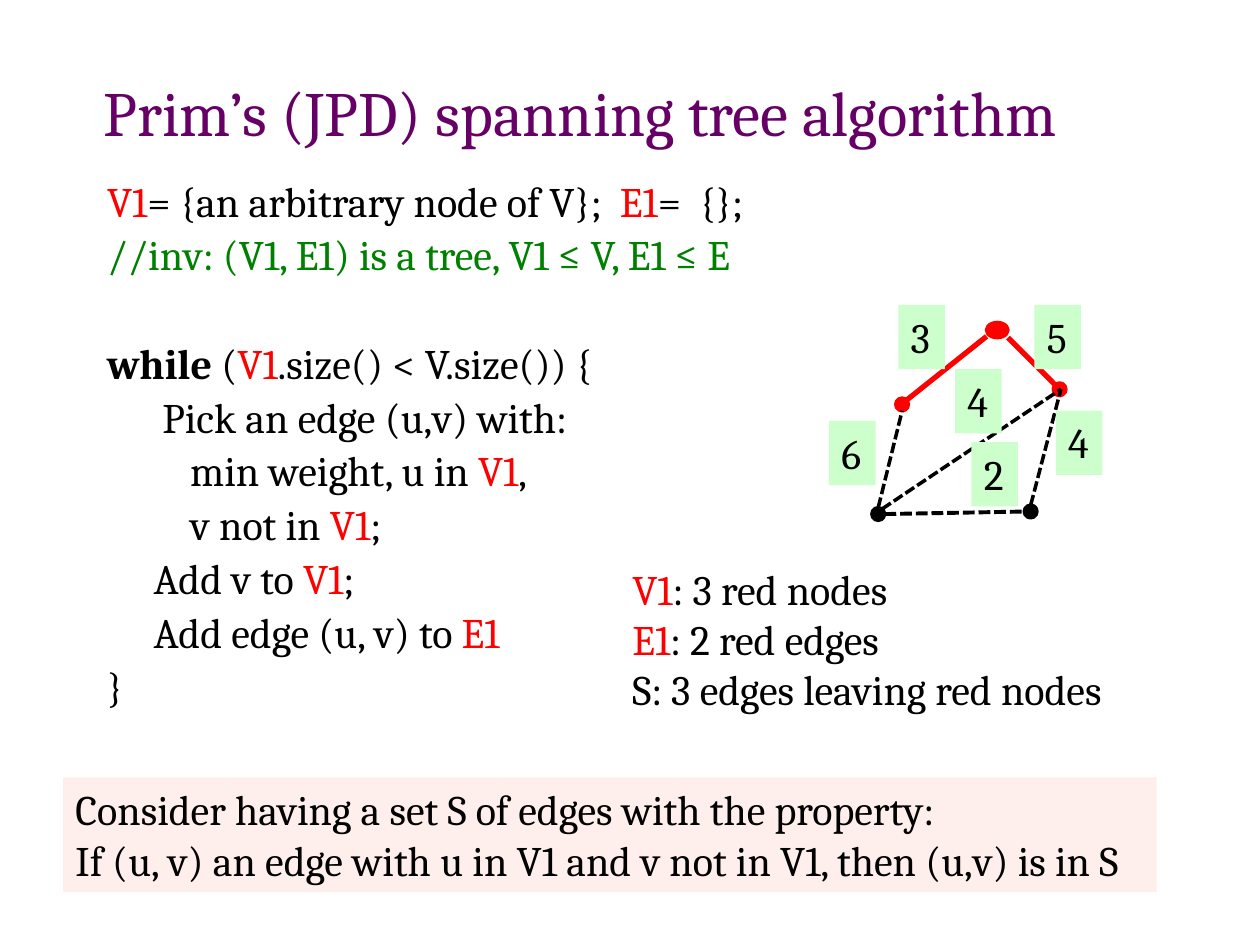
from lxml import etree
from pptx import Presentation
from pptx.dml.color import RGBColor
from pptx.enum import dml, shapes, text
from pptx.oxml.ns import qn
from pptx.util import Inches, Pt

FONT = "Cambria"
COLORS = {"black": "000000", "red": "FF0000", "green": "008000",
          "purple": "660066", "mint": "CCFFCC", "blush": "FFEFEC"}

TITLE = "Prim’s (JPD) spanning tree algorithm"
# Each line: indent in inches, space before in points, runs of (text, style)
CODE = [
    (0.04, 2, [("V1", "red"), ("= {an arbitrary node of V};  ", "black"),
               ("E1", "red"), ("=  {};", "black")]),
    (0.04, 2, [("//inv: (V1, E1) is a tree, V1 ≤ V, E1 ≤ E", "green")]),
    (0.04, 33, [("while", "bold"), (" (", "black"), ("V1", "red"),
                (".size() < V.size()) {", "black")]),
    (0.48, 2, [("Pick an edge (u,v) with:", "black")]),
    (0.70, 2, [("min weight, u in ", "black"), ("V1", "red"), (",", "black")]),
    (0.70, 2, [("v not in ", "black"), ("V1", "red"), (";", "black")]),
    (0.41, 2, [("Add v to ", "black"), ("V1", "red"), (";", "black")]),
    (0.41, 2, [("Add edge (u, v) to ", "black"), ("E1", "red")]),
    (0.04, 2, [("}", "black")]),
]
LEGEND = [
    (0, 0, [("V1", "red"), (": 3 red nodes", "black")]),
    (0, 0, [("E1", "red"), (": 2 red edges", "black")]),
    (0, 0, [("S: 3 edges leaving red nodes", "black")]),
]
PROPERTY = [
    (0, 0, [("Consider having a set S of edges with the property:", "black")]),
    (0, 0, [("If (u, v) an edge with u in V1 and v not in V1, "
             "then (u,v) is in S", "black")]),
]

# Nodes: left, top, width, height, colour
NODES = [
    (7.11, 3.16, 0.10, 0.10, "red"), (6.92, 4.03, 0.10, 0.10, "black"),
    (8.13, 4.01, 0.10, 0.10, "black"), (8.36, 3.04, 0.10, 0.10, "red"),
    (7.83, 2.56, 0.17, 0.12, "red"),
]
# Edges: start, end, colour, width in points
EDGES = [
    ((6.97, 4.03), (7.16, 3.26), "black", 2),
    ((8.18, 4.01), (8.42, 3.09), "black", 2),
    ((8.00, 2.68), (8.37, 3.05), "red", 3),
    ((7.19, 3.18), (7.83, 2.67), "red", 3),
    ((7.00, 4.04), (8.42, 3.09), "black", 2),
    ((7.02, 4.08), (8.13, 4.06), "black", 2.25),
]
WEIGHTS = [("3", 7.13, 2.42), ("2", 7.71, 3.51), ("5", 8.21, 2.42),
           ("4", 8.38, 3.26), ("6", 6.58, 3.34), ("4", 7.58, 2.93)]


def rgb(name):
    return RGBColor.from_string(COLORS[name])


def write(tf, lines):
    tf.vertical_anchor = text.MSO_ANCHOR.TOP
    for i, (indent, before, runs) in enumerate(lines):
        p = tf.paragraphs[0] if i == 0 else tf.add_paragraph()
        p.alignment = text.PP_ALIGN.LEFT
        p.space_before = Pt(before)
        p.font.name, p.font.size = FONT, Pt(24)
        if indent:
            p._p.get_or_add_pPr().set("marL", str(Inches(indent)))
        for words, style in runs:
            r = p.add_run()
            r.text = words
            r.font.bold = style == "bold"
            r.font.color.rgb = rgb("black" if style == "bold" else style)


def add_text(s, box, lines):
    tf = s.shapes.add_textbox(*map(Inches, box)).text_frame
    tf.word_wrap = True
    write(tf, lines)
    return tf


def add_filled(s, kind, box, color):
    sp = s.shapes.add_shape(kind, *map(Inches, box))
    sp.shadow.inherit = False
    sp.fill.solid()
    sp.fill.fore_color.rgb = rgb(color)
    sp.line.fill.background()
    return sp


def add_edge(s, start, end, color, width):
    c = s.shapes.add_connector(shapes.MSO_CONNECTOR.STRAIGHT,
                               *map(Inches, start + end))
    c.line.color.rgb = rgb(color)
    c.line.width = Pt(width)
    if color == "black":
        c.line.dash_style = dml.MSO_LINE.SQUARE_DOT
    etree.SubElement(c._element.spPr, qn("a:effectLst"))


def add_title(s):
    sp = s.shapes.title
    sp.left, sp.top, sp.width, sp.height = map(Inches, (0.75, 0.42, 7.75, 0.92))
    tf = sp.text_frame
    tf.text = TITLE
    tf.auto_size = text.MSO_AUTO_SIZE.NONE
    tf.vertical_anchor = text.MSO_ANCHOR.MIDDLE
    tf.margin_left = tf.margin_top = tf.margin_bottom = Inches(0.06)
    p = tf.paragraphs[0]
    p.alignment = text.PP_ALIGN.CENTER
    p.font.name, p.font.size = FONT, Pt(36)
    p.font.color.rgb = rgb("purple")


def main():
    prs = Presentation()
    prs.slide_width, prs.slide_height = Inches(10), Inches(7.5)
    s = prs.slides.add_slide(prs.slide_layouts[5])
    add_title(s)

    code = add_text(s, (0.75, 1.33, 8.5, 5.33), CODE)
    code.margin_left = code.margin_top = code.margin_bottom = Inches(0.06)

    rect, oval = shapes.MSO_SHAPE.RECTANGLE, shapes.MSO_SHAPE.OVAL
    banner = add_filled(s, rect, (0.5, 6.17, 8.68, 0.91), "blush")
    write(banner.text_frame, PROPERTY)

    for *box, color in NODES:
        node = add_filled(s, oval, box, color)
        node.line.color.rgb = rgb(color)
        node.line.width = Pt(2)
    for edge in EDGES:
        add_edge(s, *edge)
    for weight, left, top in WEIGHTS:
        label = add_filled(s, rect, (left, top, 0.37, 0.51), "mint")
        label.text_frame.word_wrap = False
        write(label.text_frame, [(0, 0, [(weight, "black")])])

    add_text(s, (4.92, 4.42, 4.08, 1.31), LEGEND)
    prs.save("out.pptx")


if __name__ == "__main__":
    main()
